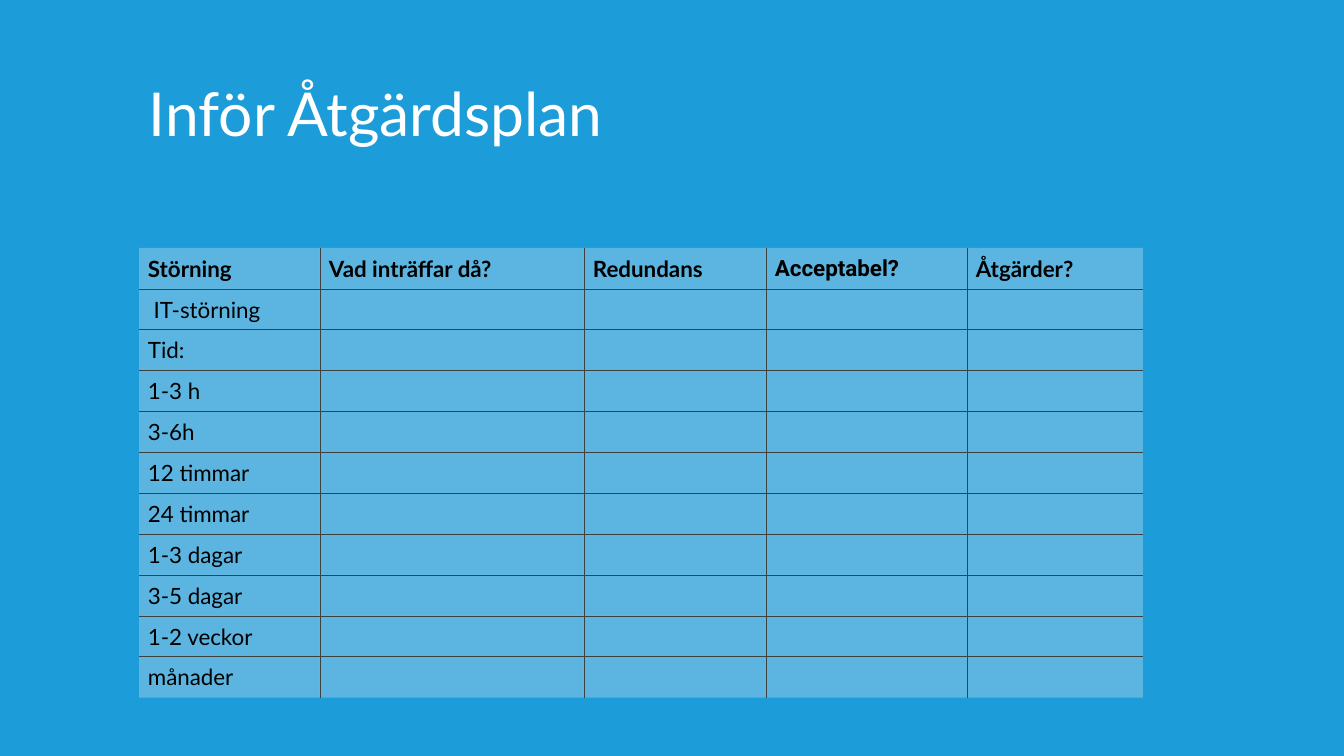
from lxml import etree
from pptx import Presentation
from pptx import util as u
from pptx.dml.color import RGBColor
from pptx.enum import text
from pptx.oxml import ns


def px(n):
    return u.Emu(n * 9144000 // 1008)


def write(frame, words, size=16, font="Lato", color="000000", bold=False):
    para = frame.paragraphs[0]
    para.text = words
    para.font.size = u.Pt(size)
    para.font.name = font
    para.font.bold = bold
    para.font.color.rgb = RGBColor.from_string(color)
    return para


deck = Presentation()
deck.slide_width, deck.slide_height = px(1344), px(756)
slide = deck.slides.add_slide(deck.slide_layouts[6])
back = slide.background.fill
back.solid()
back.fore_color.rgb = RGBColor.from_string("1C9CD9")

title = slide.shapes.add_textbox(px(139), px(81), px(1099), px(71)).text_frame
title.word_wrap = True
title.vertical_anchor = text.MSO_ANCHOR.MIDDLE
write(title, "Inför Åtgärdsplan", size=43.2, color="FFFFFF").line_spacing = 0.9

heads = ["Störning", "Vad inträffar då?", "Redundans", "Acceptabel?", "Åtgärder?"]
times = [" IT-störning", "Tid:", "1-3 h", "3-6h", "12 timmar", "24 timmar",
         "1-3 dagar", "3-5 dagar", "1-2 veckor", "månader"]
rows = [heads] + [[time, "", "", "", ""] for time in times]
wides = [181, 264, 182, 201, 176]
high = 40
grid = slide.shapes.add_table(len(rows), len(wides), px(139), px(248),
                              px(sum(wides)), px(high * len(rows))).table
grid.first_row = False
grid.horz_banding = False
for col, wide in zip(grid.columns, wides):
    col.width = px(wide)

for r, row in enumerate(rows):
    grid.rows[r].height = px(high)
    for c, words in enumerate(row):
        cell = grid.cell(r, c)
        cell.vertical_anchor = text.MSO_ANCHOR.BOTTOM
        cell.margin_left, cell.margin_right = px(9), 0
        cell.margin_top = cell.margin_bottom = px(7)
        write(cell.text_frame, words, bold=r == 0,
              font="Roboto" if words == "Acceptabel?" else "Lato")

        props = cell._tc.get_or_add_tcPr()
        inner = {"L": c > 0, "R": c < len(wides) - 1,
                 "T": r > 0, "B": r < len(rows) - 1}
        for side, shown in inner.items():
            line = etree.SubElement(props, ns.qn("a:ln" + side), w=str(u.Pt(0.5)))
            if shown:
                paint = etree.SubElement(line, ns.qn("a:solidFill"))
                etree.SubElement(paint, ns.qn("a:srgbClr"), val="404040")
            else:
                etree.SubElement(line, ns.qn("a:noFill"))

        cell.fill.solid()
        cell.fill.fore_color.rgb = RGBColor.from_string("F2F2F2")
        tint = props.find(ns.qn("a:solidFill")).find(ns.qn("a:srgbClr"))
        etree.SubElement(tint, ns.qn("a:alpha"), val="30000")

deck.save("out.pptx")
